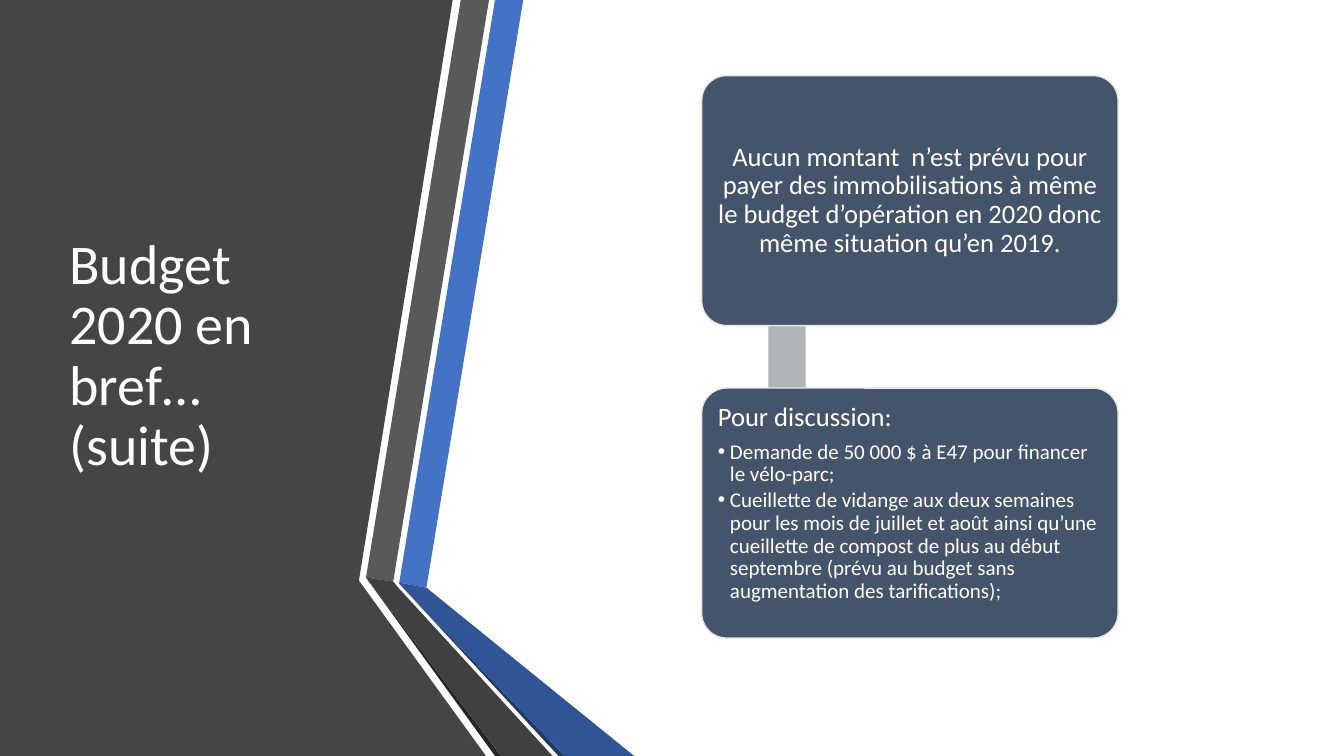
from lxml.etree import SubElement
from pptx import Presentation
from pptx.dml.color import RGBColor
from pptx.enum.shapes import MSO_SHAPE
from pptx.enum.text import MSO_ANCHOR, MSO_AUTO_SIZE, PP_ALIGN
from pptx.oxml.ns import qn
from pptx.util import Pt

PX = 9144
THEME = {
    "font": "Calibri",
    "title_size": 40, "lead_size": 19, "item_size": 15,
    "text": "FFFFFF", "panel": "454545", "card": "44546A",
    "card_line": "E7E6E6", "link": "B0B4B9",
    "blue": "4472C4", "blue_fold": "2F5597", "blue_edge": "203864",
    "gray": "595959", "gray_fold": "404040", "gray_edge": "262626",
}


def paint(shape, color):
    shape.shadow.inherit = False
    shape.fill.solid()
    shape.fill.fore_color.rgb = RGBColor.from_string(THEME[color])
    shape.line.fill.background()


def write(paragraph, text, size, alignment):
    paragraph.text = text
    layout = {"alignment": alignment, "line_spacing": 0.9, "space_before": Pt(0)}
    for name, value in layout.items():
        setattr(paragraph, name, value)
    font = paragraph.runs[0].font
    font.name = THEME["font"]
    font.size = Pt(THEME[size])
    font.color.rgb = RGBColor.from_string(THEME["text"])


presentation = Presentation()
presentation.slide_width = 1333 * PX
presentation.slide_height = 750 * PX
slide = presentation.slides.add_slide(presentation.slide_layouts[1])
shapes = slide.shapes

ribbons = [
    ("panel", [(0, 0), (449, 0), (356, 576), (482, 750), (0, 750)]),
    ("blue", [(396, 578), (423, 583), (519, 0), (491, 0)]),
    ("gray", [(485, 0), (457, 0), (363, 573), (390, 577)]),
    ("gray_edge", [(363, 573), (491, 750), (497, 750)]),
    ("blue_edge", [(396, 579), (554, 750), (560, 750)]),
    ("blue_fold", [(396, 579), (560, 750), (629, 750), (423, 583), (396, 578)]),
    ("gray_fold", [(548, 750), (395, 583), (390, 577), (363, 573), (497, 750)]),
]
for color, points in ribbons:
    builder = shapes.build_freeform(*points[0], scale=PX)
    builder.add_line_segments(points[1:], close=True)
    paint(builder.convert_to_shape(), color)

link = shapes.add_shape(MSO_SHAPE.RECTANGLE, 762 * PX, 138 * PX, 37 * PX, 308 * PX)
paint(link, "link")

cards = []
for top in (75, 385):
    card = shapes.add_shape(MSO_SHAPE.ROUNDED_RECTANGLE, 696 * PX, top * PX, 413 * PX, 248 * PX)
    card.adjustments[0] = 0.1
    paint(card, "card")
    card.line.color.rgb = RGBColor.from_string(THEME["card_line"])
    card.line.width = Pt(1)
    cards.append(card)

title = shapes.title
body = slide.placeholders[1]
placements = [
    (title, (59, 75, 304, 558)),
    (body, (704, 392, 399, 233)),
]
for placeholder, box in placements:
    for name, value in zip(("left", "top", "width", "height"), box):
        setattr(placeholder, name, value * PX)
    placeholder.element.getparent().append(placeholder.element)

frames = [
    (title, MSO_ANCHOR.MIDDLE, 10, 20),
    (cards[0], MSO_ANCHOR.MIDDLE, 8, 8),
    (body, MSO_ANCHOR.TOP, 8, 8),
]
for shape, anchor, margin, margin_right in frames:
    settings = {
        "word_wrap": True, "auto_size": MSO_AUTO_SIZE.NONE, "vertical_anchor": anchor,
        "margin_left": margin * PX, "margin_right": margin_right * PX,
        "margin_top": 8 * PX, "margin_bottom": 8 * PX,
    }
    for name, value in settings.items():
        setattr(shape.text_frame, name, value)

write(title.text_frame.paragraphs[0], "Budget 2020 en bref… (suite)", "title_size", PP_ALIGN.LEFT)
write(
    cards[0].text_frame.paragraphs[0],
    "Aucun montant  n’est prévu pour payer des immobilisations à même "
    "le budget d’opération en 2020 donc même situation qu’en 2019.",
    "lead_size", PP_ALIGN.CENTER,
)

discussion = [
    ("Pour discussion:", "lead_size", 6.5, 0),
    ("Demande de 50 000 $ à E47 pour financer le vélo-parc;", "item_size", 2.25, 1),
    ("Cueillette de vidange aux deux semaines pour les mois de juillet et août "
     "ainsi qu’une cueillette de compost de plus au début septembre "
     "(prévu au budget sans augmentation des tarifications);", "item_size", 2.25, 1),
]
for index, (text, size, gap, level) in enumerate(discussion):
    frame = body.text_frame
    paragraph = frame.add_paragraph() if index else frame.paragraphs[0]
    write(paragraph, text, size, PP_ALIGN.LEFT)
    paragraph.space_after = Pt(gap)
    paragraph.level = level
    properties = paragraph.runs[0].font._element.getparent().getparent().get_or_add_pPr()
    properties.set("marL", str(12 * PX * level))
    properties.set("indent", str(-12 * PX * level))
    if level:
        SubElement(properties, qn("a:buChar")).set("char", "•")
    else:
        SubElement(properties, qn("a:buNone"))

presentation.save("out.pptx")
